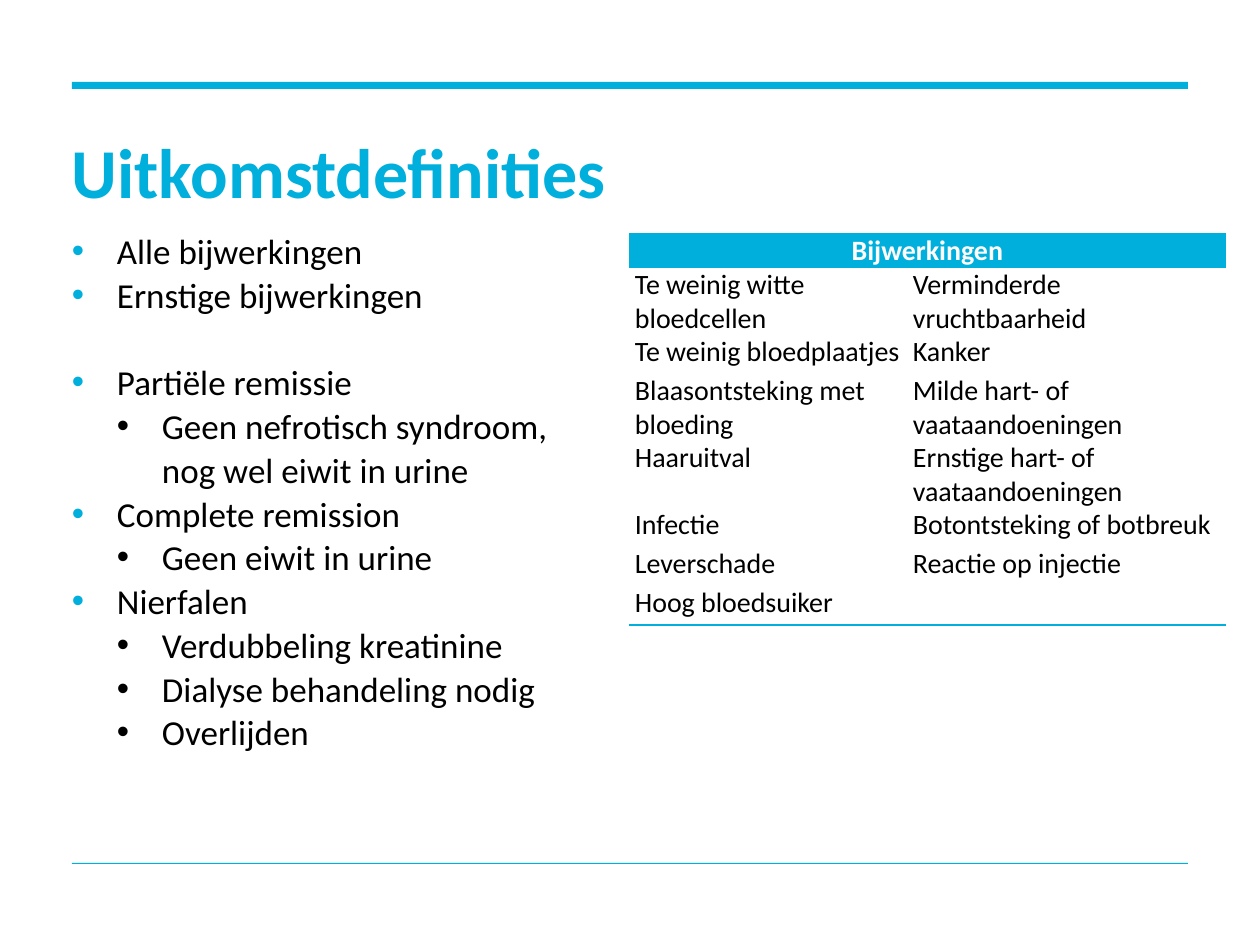
from lxml.etree import SubElement
from pptx import Presentation
from pptx.dml.color import RGBColor
from pptx.enum.shapes import MSO_SHAPE as Shape
from pptx.enum.text import MSO_ANCHOR as Anchor, PP_ALIGN as Align
from pptx.oxml import parse_xml
from pptx.oxml.ns import nsdecls, qn
from pptx.util import Emu, Pt

EMU_PER_PX = 914400 / 126
COLORS = {"accent": "00AFDC", "text": "000000", "header": "FFFFFF"}
PLAIN_TABLE = "{2D5ABB26-0587-4C30-8999-92F81FD0307C}"
LEFT, WIDTH, INDENT = 72, 1116, 45

# level, text, has a bullet, points before
OUTCOMES = [
    (0, "Alle bijwerkingen", True, 0),
    (0, "Ernstige bijwerkingen", True, 0),
    (0, "Partiële remissie", True, 25),
    (1, "Geen nefrotisch syndroom,", True, 0),
    (1, "nog wel eiwit in urine", False, 0),
    (0, "Complete remission", True, 0),
    (1, "Geen eiwit in urine", True, 0),
    (0, "Nierfalen", True, 0),
    (1, "Verdubbeling kreatinine", True, 0),
    (1, "Dialyse behandeling nodig", True, 0),
    (1, "Overlijden", True, 0),
]
SIDE_EFFECTS = [
    ("Te weinig witte bloedcellen", "Verminderde vruchtbaarheid"),
    ("Te weinig bloedplaatjes", "Kanker"),
    ("Blaasontsteking met bloeding", "Milde hart- of vaataandoeningen"),
    ("Haaruitval", "Ernstige hart- of vaataandoeningen"),
    ("Infectie", "Botontsteking of botbreuk"),
    ("Leverschade", "Reactie op injectie"),
    ("Hoog bloedsuiker", ""),
]


def px(length):
    return Emu(round(length * EMU_PER_PX))


def rgb(name):
    return RGBColor.from_string(COLORS[name])


def write(paragraph, text, size=20, color="text", bold=False, align=Align.LEFT,
          spacing=None, before=0):
    paragraph.alignment = align
    paragraph.space_before = Pt(before)
    if spacing:
        paragraph.line_spacing = Pt(spacing)
    if text:
        run = paragraph.add_run()
        run.text = text
        run.font.name, run.font.size, run.font.bold = "Calibri", Pt(size), bold
        run.font.color.rgb = rgb(color)


def indent(paragraph, level, bullet):
    """Set the left indent of a level, with a hanging bullet if wanted."""
    properties = paragraph._p.get_or_add_pPr()
    properties.set("marL", str(px(INDENT * (level + 1))))
    properties.set("indent", str(px(-INDENT) if bullet else 0))
    if not bullet:
        SubElement(properties, qn("a:buNone"))
        return
    color = SubElement(properties, qn("a:buClr"))
    SubElement(color, qn("a:srgbClr"), val=COLORS["text" if level else "accent"])
    SubElement(properties, qn("a:buFont"), typeface="Arial")
    SubElement(properties, qn("a:buChar"), char="•")


def add_border(cell, side):
    cell._tc.get_or_add_tcPr().insert(0, parse_xml(
        f'<a:{side} {nsdecls("a")} w="12700"><a:solidFill>'
        f'<a:srgbClr val="{COLORS["accent"]}"/></a:solidFill></a:{side}>'))


class SlideBuilder:
    def __init__(self, slide):
        self.slide = slide

    def bar(self, top, height):
        shape = self.slide.shapes.add_shape(
            Shape.RECTANGLE, px(LEFT), px(top), px(WIDTH), px(height))
        shape.shadow.inherit = False
        shape.fill.solid()
        shape.fill.fore_color.rgb = rgb("accent")
        shape.line.fill.background()

    def text_frame(self, top, width, height, anchor=Anchor.TOP):
        frame = self.slide.shapes.add_textbox(
            px(LEFT), px(top), px(width), px(height)).text_frame
        frame.word_wrap = True
        frame.vertical_anchor = anchor
        frame.margin_left = frame.margin_right = 0
        frame.margin_top = frame.margin_bottom = 0
        return frame

    def title(self, text):
        frame = self.text_frame(139, WIDTH, 73, Anchor.MIDDLE)
        write(frame.paragraphs[0], text, size=40, color="accent", bold=True, spacing=42)

    def bullets(self, items):
        frame = self.text_frame(228, 557, 568)
        for index, (level, text, bullet, before) in enumerate(items):
            paragraph = frame.add_paragraph() if index else frame.paragraphs[0]
            paragraph.level = level
            indent(paragraph, level, bullet)
            write(paragraph, text, spacing=25, before=before)

    def table(self, header, rows, widths=(278, 319), header_height=24, row_height=39):
        height = header_height + row_height * len(rows)
        table = self.slide.shapes.add_table(
            len(rows) + 1, len(widths), px(629), px(234), px(sum(widths)), px(height)).table
        table._tbl.tblPr.find(qn("a:tableStyleId")).text = PLAIN_TABLE
        table.horz_banding = False
        for column, width in zip(table.columns, widths):
            column.width = px(width)
        for index, row in enumerate(table.rows):
            row.height = px(row_height if index else header_height)
        for cell in table.iter_cells():
            cell.margin_left = cell.margin_right = px(6)
            cell.margin_top = cell.margin_bottom = 0
            cell.fill.background()

        first = table.cell(0, 0)
        first.merge(table.cell(0, len(widths) - 1))
        first.fill.solid()
        first.fill.fore_color.rgb = rgb("accent")
        write(first.text_frame.paragraphs[0], header, size=16, color="header",
              bold=True, align=Align.CENTER)
        for row, texts in enumerate(rows, 1):
            for column, text in enumerate(texts):
                write(table.cell(row, column).text_frame.paragraphs[0], text, size=16)
        for column in range(len(widths)):
            add_border(table.cell(0, column), "lnT")
            add_border(table.cell(len(rows), column), "lnB")


def main():
    presentation = Presentation()
    presentation.slide_width, presentation.slide_height = px(1260), px(945)
    slide = presentation.slides.add_slide(presentation.slide_layouts[6])
    builder = SlideBuilder(slide)
    builder.bar(top=82, height=7)
    builder.bar(top=863, height=1)
    builder.title("Uitkomstdefinities")
    builder.bullets(OUTCOMES)
    builder.table("Bijwerkingen", SIDE_EFFECTS)
    presentation.save("out.pptx")


if __name__ == "__main__":
    main()
